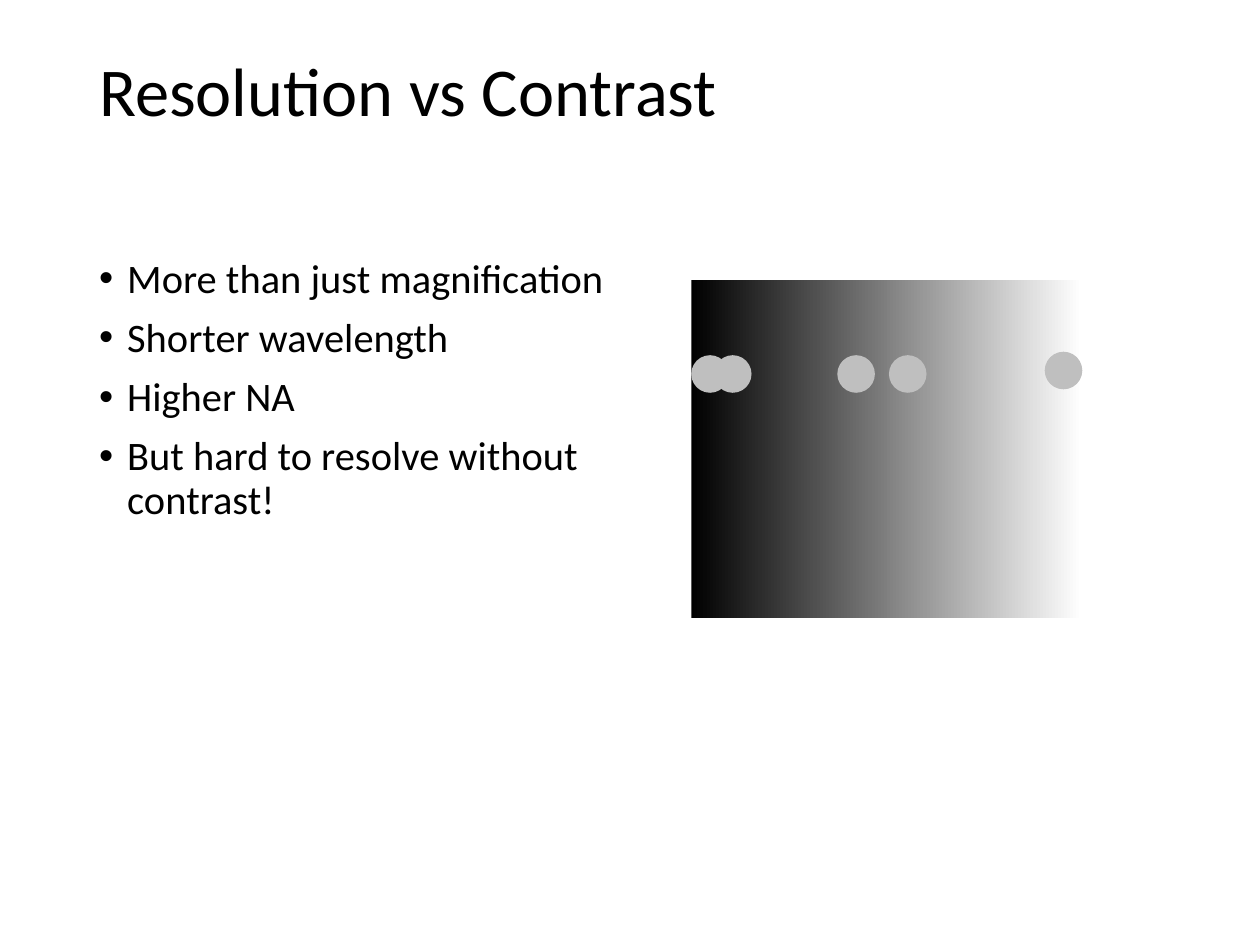
import pptx
import pptx.dml.color
import pptx.enum.shapes
import pptx.enum.text
import pptx.oxml
import pptx.oxml.ns
import pptx.util
from dataclasses import dataclass

Pt = pptx.util.Pt
RGB = pptx.dml.color.RGBColor.from_string
Kind = pptx.enum.shapes.MSO_SHAPE


@dataclass(frozen=True)
class Theme:
    """Colours, font and type sizes of the slide."""
    font: str = "Calibri"
    ink: str = "000000"
    pale: str = "FFFFFF"
    dot: str = "BFBFBF"
    head: float = 39.1
    list: float = 23.1


THEME = Theme()


def place(shape, box):
    """Move a placeholder into its box and anchor its text at the top."""
    shape.left, shape.top, shape.width, shape.height = map(Pt, box)
    frame = shape.text_frame
    frame.word_wrap = True
    frame.auto_size = pptx.enum.text.MSO_AUTO_SIZE.NONE
    frame.vertical_anchor = pptx.enum.text.MSO_ANCHOR.TOP
    return frame


def write(para, text, size):
    """Add one left-aligned run to a paragraph."""
    para.alignment = pptx.enum.text.PP_ALIGN.LEFT
    para.line_spacing = 0.9
    para.space_before = Pt(0)
    run = para.add_run()
    run.text = text
    run.font.name = THEME.font
    run.font.size = Pt(size)
    run.font.color.rgb = RGB(THEME.ink)


def bullet(para):
    """Give a paragraph a round bullet with a hanging indent."""
    props = para._p.get_or_add_pPr()
    props.set("marL", str(Pt(16)))
    props.set("indent", str(Pt(-16)))
    names = pptx.oxml.ns.nsdecls("a")
    for mark in ('buFont {} typeface="Arial"', 'buChar {} char="•"'):
        props.append(pptx.oxml.parse_xml(f"<a:{mark.format(names)}/>"))


def title(slide, box, text):
    """Fill the title placeholder."""
    frame = place(slide.shapes.title, box)
    write(frame.paragraphs[0], text, THEME.head)


def points(slide, box, items):
    """Fill the body placeholder with a bulleted list."""
    frame = place(slide.placeholders[1], box)
    for i, item in enumerate(items):
        para = frame.add_paragraph() if i else frame.paragraphs[0]
        bullet(para)
        write(para, item, THEME.list)
        if i:
            para.space_before = Pt(8.9)


def form(slide, kind, box):
    """Add a preset shape with no line or shadow."""
    shape = slide.shapes.add_shape(kind, *map(Pt, box))
    shape.shadow.inherit = False
    shape.line.fill.background()
    return shape


def panel(slide, box, dots, size):
    """Draw a dark-to-light panel with dots offset from its corner."""
    left, top = box[:2]
    fill = form(slide, Kind.RECTANGLE, box).fill
    fill.gradient()
    fill.gradient_angle = 0
    for i, (stop, tone) in enumerate(zip(fill.gradient_stops, (THEME.ink, THEME.pale))):
        stop.position = i
        stop.color.rgb = RGB(tone)
    for x, y in dots:
        dot = form(slide, Kind.OVAL, (left + x, top + y, size, size))
        dot.fill.solid()
        dot.fill.fore_color.rgb = RGB(THEME.dot)


def main():
    """Build and save the slide."""
    deck = pptx.Presentation()
    deck.slide_width, deck.slide_height = Pt(720), Pt(540)
    slide = deck.slides.add_slide(deck.slide_layouts[1])
    title(slide, (49.5, 29, 621, 104), "Resolution vs Contrast")
    points(slide, (49.5, 144, 306, 343), (
        "More than just magnification",
        "Shorter wavelength",
        "Higher NA",
        "But hard to resolve without contrast!",
    ))
    dots = ((0, 43), (13, 43), (83.5, 43), (113, 43), (202, 41))
    panel(slide, (395, 160, 223.5, 193), dots, 21.5)
    deck.save("out.pptx")


if __name__ == "__main__":
    main()
